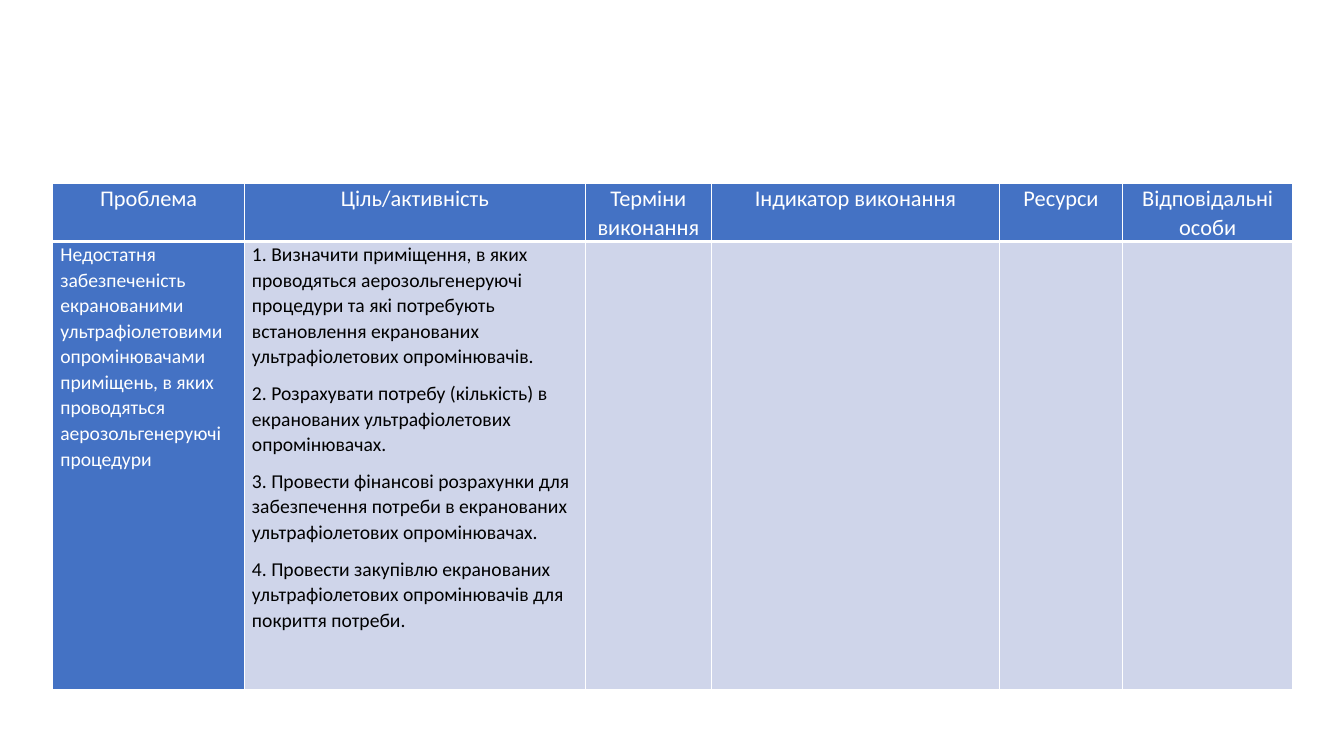
"""Build a slide with an action plan table on ultraviolet irradiators."""
from lxml import etree
from pptx import Presentation
from pptx.dml.color import RGBColor
from pptx.enum.text import PP_ALIGN
from pptx.oxml.ns import qn
from pptx.util import Cm, Pt

WHITE = RGBColor(0xFF, 0xFF, 0xFF)
BLACK = RGBColor(0, 0, 0)
BLUE = RGBColor(0x44, 0x72, 0xC4)
PALE = RGBColor(0xCF, 0xD5, 0xEA)
LEFT, CENTER = PP_ALIGN.LEFT, PP_ALIGN.CENTER

HEADERS = ["Проблема", "Ціль/активність", "Терміни виконання",
           "Індикатор виконання", "Ресурси", "Відповідальні особи"]
PROBLEM = ("Недостатня забезпеченість екранованими ультрафіолетовими "
           "опромінювачами приміщень, в яких проводяться "
           "аерозольгенеруючі процедури")
ACTIVITIES = [
    "1. Визначити приміщення, в яких проводяться аерозольгенеруючі процедури "
    "та які потребують встановлення екранованих ультрафіолетових опромінювачів.",
    "2. Розрахувати потребу (кількість) в екранованих ультрафіолетових "
    "опромінювачах.",
    "3. Провести фінансові розрахунки для забезпечення потреби в екранованих "
    "ультрафіолетових опромінювачах.",
    "4. Провести закупівлю екранованих ультрафіолетових опромінювачів для "
    "покриття потреби.",
]
WIDTHS = [4.83, 8.59, 3.18, 7.26, 3.1, 4.29]
HEIGHTS = [1.37, 11.3]
MARGINS = {"margin_left": Cm(0.19), "margin_right": Cm(0.19),
           "margin_top": 0, "margin_bottom": 0}


def add_borders(cell, bottom):
    tc_pr = cell._tc.get_or_add_tcPr()
    for side, width in {"L": 1, "R": 1, "T": 1, "B": bottom}.items():
        line = etree.SubElement(tc_pr, qn(f"a:ln{side}"), w=str(Pt(width)))
        fill = etree.SubElement(line, qn("a:solidFill"))
        etree.SubElement(fill, qn("a:srgbClr"), val=str(WHITE))


def write(cell, lines, size, color, align):
    tf = cell.text_frame
    for i, line in enumerate(lines):
        p = tf.add_paragraph() if i else tf.paragraphs[0]
        p.alignment, p.line_spacing, p.space_after = align, 1.07, Pt(8)
        r = p.add_run()
        r.text = line
        r.font.color.rgb = color
        for name, value in {"name": "Calibri", "size": Pt(size), "bold": False}.items():
            setattr(r.font, name, value)


prs = Presentation()
prs.slide_width, prs.slide_height = Cm(33.87), Cm(19.05)
s = prs.slides.add_slide(prs.slide_layouts[6])

table = s.shapes.add_table(len(HEIGHTS), len(WIDTHS), Cm(1.33), Cm(4.61),
                           Cm(sum(WIDTHS)), Cm(sum(HEIGHTS))).table
for column, width in zip(table.columns, WIDTHS):
    column.width = Cm(width)
for row, height in zip(table.rows, HEIGHTS):
    row.height = Cm(height)

for r_index, row in enumerate(table.rows):
    for c_index, cell in enumerate(row.cells):
        add_borders(cell, 1 if r_index else 3)
        cell.fill.solid()
        cell.fill.fore_color.rgb = PALE if r_index and c_index else BLUE
        for name, value in MARGINS.items():
            setattr(cell, name, value)

for c_index, header in enumerate(HEADERS):
    write(table.cell(0, c_index), [header], 16, WHITE, CENTER)
write(table.cell(1, 0), [PROBLEM], 14, WHITE, LEFT)
write(table.cell(1, 1), ACTIVITIES, 14, BLACK, LEFT)

prs.save("out.pptx")
